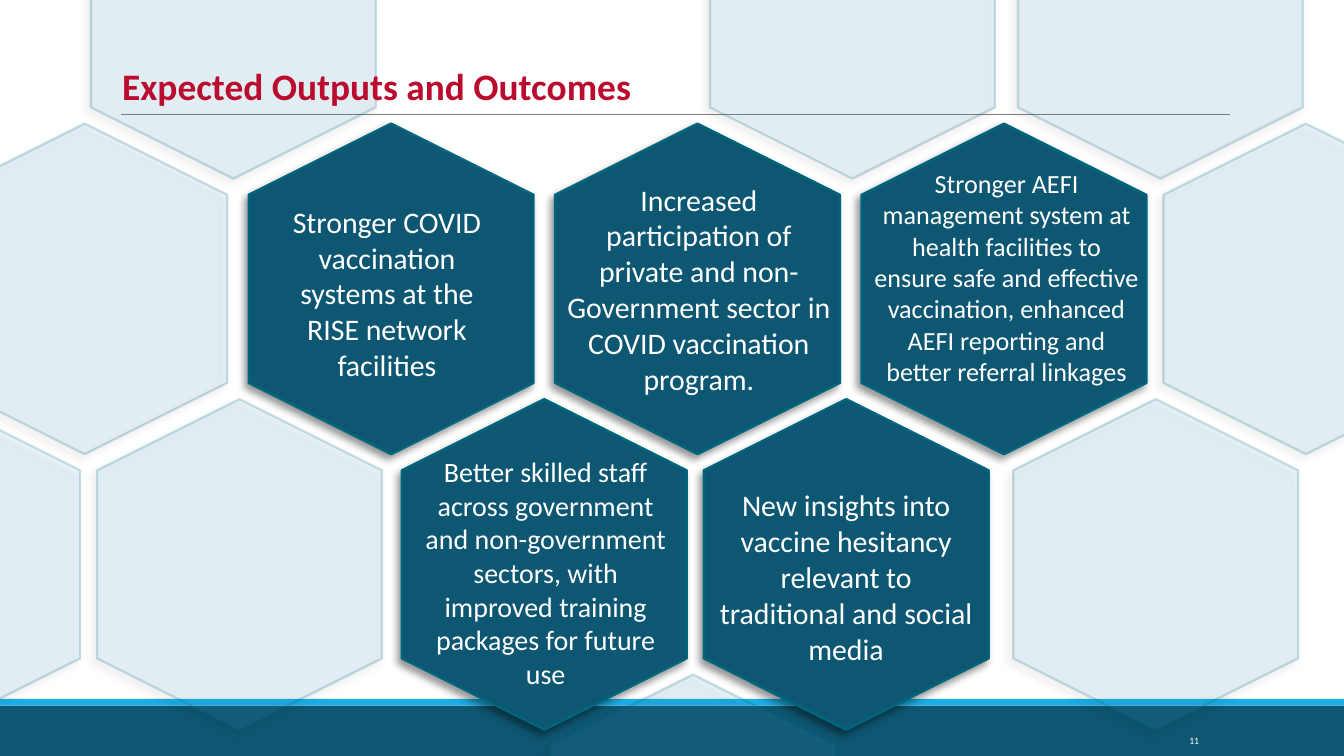
from dataclasses import dataclass

from lxml.etree import SubElement
from pptx import Presentation
from pptx.dml.color import RGBColor
from pptx.enum.shapes import MSO_CONNECTOR, MSO_SHAPE
from pptx.enum.text import MSO_ANCHOR, PP_ALIGN
from pptx.oxml import parse_xml
from pptx.oxml.ns import nsdecls, qn
from pptx.util import Inches, Pt

SLIDE_WIDTH = 10
SLIDE_HEIGHT = SLIDE_WIDTH * 9 / 16
FONT = "Calibri"
NAVY, SKY, TEAL, PALE = "0E5772", "1CADE4", "00667D", "41ABE6"
CRIMSON, GREY, WHITE = "BA0C2F", "808080", "FFFFFF"

# Honeycomb: columns are half a hexagon apart, so rows interlock
FIRST_X, COLUMN_STEP = 0.63, 1.14
FIRST_Y, ROW_STEP = 0.1, 2.05
HEXAGON_LENGTH, HEXAGON_BREADTH = 2.46, 2.12


@dataclass(frozen=True)
class Caption:
    text: str
    size: float
    width: float
    height: float
    shift_x: float = 0
    shift_y: float = 0


@dataclass(frozen=True)
class Cell:
    column: float
    row: int
    caption: Caption | None = None


CELLS = (
    Cell(5.01, 0),
    Cell(0.97, 0),
    Cell(2, 1, Caption(
        "Stronger COVID vaccination systems at the RISE network facilities",
        16, 1.66, 1.45, -0.03, 0.04)),
    Cell(4, 1, Caption(
        "Increased participation of private and non-Government sector in "
        "COVID vaccination program.", 16, 2.19, 1.72, 0.01, 0.01)),
    Cell(6, 1, Caption(
        "Stronger AEFI management system at health facilities to ensure safe "
        "and effective vaccination, enhanced AEFI reporting and better "
        "referral linkages", 14, 2.17, 1.99, 0.02, 0.04)),
    Cell(3, 2, Caption(
        "Better skilled staff across government and non-government sectors, "
        "with improved training packages for future use",
        15, 2.12, 1.87, 0.01, 0.07)),
    Cell(4.97, 2, Caption(
        "New insights into vaccine hesitancy relevant to traditional and "
        "social media", 16, 2.12, 1.45, 0, 0.1)),
    Cell(1.01, 2),
    Cell(6.99, 2),
    Cell(0, 1),
    Cell(-0.96, 2),
    Cell(7.97, 1),
    Cell(7.02, 0),
    Cell(3.97, 3),
)


def color(value: str) -> RGBColor:
    return RGBColor.from_string(value)


def set_opacity(fill, percent: int) -> None:
    """Make a solid fill see-through."""
    tint = fill._xPr.find(qn("a:solidFill"))[0]
    SubElement(tint, qn("a:alpha")).set("val", str(percent * 1000))


def add_shadow(shape) -> None:
    """Soft shadow falling down and to the left."""
    shape._element.spPr.append(parse_xml(
        f'<a:effectLst {nsdecls("a")}>'
        f'<a:outerShdw blurRad="{Pt(4)}" dist="{Pt(3)}" dir="{135 * 60000}" '
        'algn="tr" rotWithShape="0"><a:srgbClr val="000000">'
        '<a:alpha val="40000"/></a:srgbClr></a:outerShdw></a:effectLst>'))


def add_band(page, top: float, height: float, fill: str) -> None:
    band = page.shapes.add_shape(
        MSO_SHAPE.RECTANGLE, 0, Inches(top), Inches(SLIDE_WIDTH), Inches(height))
    band.shadow.inherit = False
    band.fill.solid()
    band.fill.fore_color.rgb = color(fill)
    band.line.fill.background()


def add_text(page, text: str, left: float, top: float, width: float,
             height: float, size: float, ink: str, align=PP_ALIGN.LEFT,
             bold: bool = False):
    box = page.shapes.add_textbox(
        Inches(left), Inches(top), Inches(width), Inches(height))
    frame = box.text_frame
    frame.word_wrap = True
    para = frame.paragraphs[0]
    para.text = text
    para.alignment = align
    para.font.name = FONT
    para.font.size = Pt(size)
    para.font.bold = bold
    para.font.color.rgb = color(ink)
    return frame


def add_cell(page, cell: Cell) -> None:
    """Hexagon standing on its tip: navy with a caption, else pale."""
    center_x = FIRST_X + cell.column * COLUMN_STEP
    center_y = FIRST_Y + cell.row * ROW_STEP
    caption = cell.caption
    hexagon = page.shapes.add_shape(
        MSO_SHAPE.HEXAGON,
        Inches(center_x - HEXAGON_LENGTH / 2),
        Inches(center_y - HEXAGON_BREADTH / 2),
        Inches(HEXAGON_LENGTH), Inches(HEXAGON_BREADTH))
    hexagon.rotation = 90
    hexagon.fill.solid()
    hexagon.fill.fore_color.rgb = color(NAVY if caption else PALE)
    hexagon.line.color.rgb = color(TEAL)
    hexagon.line.width = Pt(1.25)
    add_shadow(hexagon)
    if caption is None:
        set_opacity(hexagon.fill, 10)
        set_opacity(hexagon.line.fill, 20)
        return
    add_text(page, caption.text,
             center_x + caption.shift_x - caption.width / 2,
             center_y + caption.shift_y - caption.height / 2,
             caption.width, caption.height, caption.size, WHITE,
             PP_ALIGN.CENTER)


def main() -> None:
    deck = Presentation()
    deck.slide_width, deck.slide_height = Inches(SLIDE_WIDTH), Inches(SLIDE_HEIGHT)
    page = deck.slides.add_slide(deck.slide_layouts[6])

    # Footer bands
    add_band(page, 5.25, SLIDE_HEIGHT - 5.25, NAVY)
    add_band(page, 5.2, 0.05, SKY)

    # Rule under the title
    rule = page.shapes.add_connector(
        MSO_CONNECTOR.STRAIGHT, Inches(0.9), Inches(0.85), Inches(9.15), Inches(0.85))
    rule.line.color.rgb = color(GREY)
    rule.line.width = Pt(0.5)
    SubElement(rule._element.spPr, qn("a:effectLst"))

    # Honeycomb with its captions
    for cell in CELLS:
        add_cell(page, cell)

    # Title and page number
    add_text(page, "Expected Outputs and Outcomes", 0.81, 0.42, 8.69, 0.54,
             20, CRIMSON, bold=True)
    number = add_text(page, "11", 7.94, 5.36, 1.08, 0.3, 5.2, WHITE, PP_ALIGN.RIGHT)
    number.vertical_anchor = MSO_ANCHOR.MIDDLE
    number.margin_top = number.margin_bottom = Inches(0.1)

    deck.save("out.pptx")


if __name__ == "__main__":
    main()
